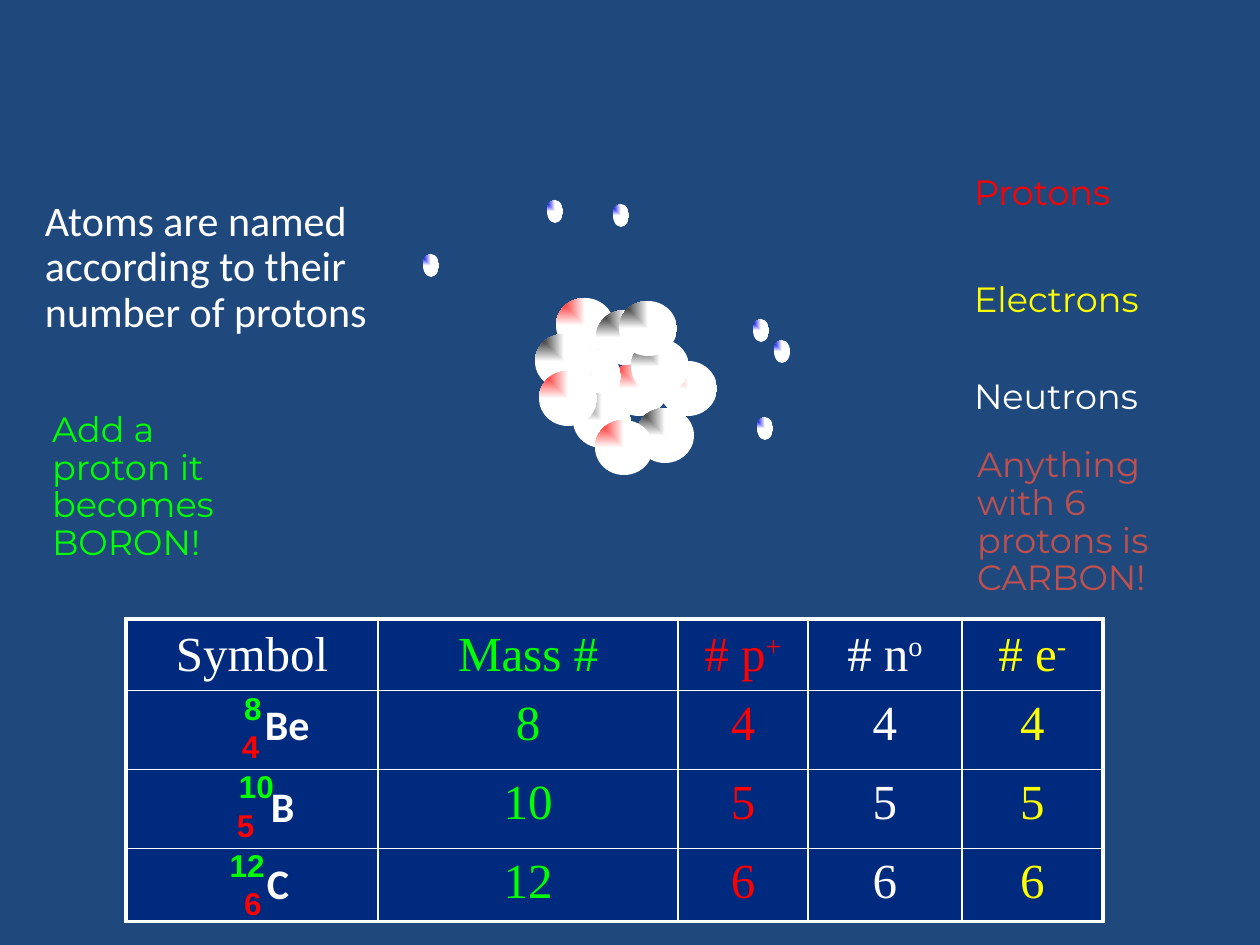
from lxml.etree import SubElement
from pptx import Presentation
from pptx.dml.color import RGBColor
from pptx.enum.shapes import MSO_SHAPE
from pptx.enum.text import MSO_ANCHOR, PP_ALIGN
from pptx.oxml import parse_xml
from pptx.oxml.ns import nsdecls, qn
from pptx.util import Pt

PX = 914400 / 126
COLORS = {"background": "1F497D", "cell": "002A7E", "white": "FFFFFF",
          "black": "000000", "red": "FF0000", "blue": "0000FF",
          "green": "00FF00", "yellow": "FFFF00", "brick": "C0504D"}

# kind: core colour, width, height
PARTICLES = {"proton": ("red", 58, 55), "neutron": ("black", 58, 55),
             "electron": ("blue", 16, 23)}
# kind, left, top; from back to front
ATOM = [
    ("proton", 556, 298), ("proton", 659, 361), ("proton", 610, 361),
    ("proton", 563, 349), ("neutron", 596, 310), ("neutron", 631, 339),
    ("neutron", 636, 408), ("neutron", 573, 393), ("neutron", 619, 301),
    ("neutron", 535, 334), ("proton", 539, 371), ("proton", 595, 420),
    ("electron", 613, 204), ("electron", 753, 319), ("electron", 423, 254),
    ("electron", 547, 200), ("electron", 774, 340), ("electron", 757, 417),
]

# text, box, colour, size, font, left inset
NOTES = [
    ("Atoms are named according to their number of protons",
     (-15, 194, 403, 180), "white", 24, "Calibri", 60),
    ("Protons", (961, 169, 281, 58), "red", 20, "Montserrat", 13),
    ("Electrons", (961, 276, 281, 62), "yellow", 20, "Montserrat", 13),
    ("Neutrons", (961, 373, 281, 58), "white", 20, "Montserrat", 13),
    ("Add a proton it becomes BORON!", (-8, 406, 271, 190), "green", 20, "Montserrat", 60),
    ("Anything with 6 protons is CARBON!", (917, 441, 271, 190), "brick", 20, "Montserrat", 60),
]

TABLE_LEFT, TABLE_TOP = 126, 619
COLUMN_WIDTHS = [252, 300, 130, 154, 141]
ROW_HEIGHTS = [67, 79, 79, 73]
COLUMN_COLORS = ["white", "green", "red", "white", "yellow"]
# header text, superscript
HEADERS = [("Symbol", ""), ("Mass #", ""), ("# p", "+"), ("# n", "o"), ("# e", "-")]
COUNTS = [["", "8", "4", "4", "4"], ["", "10", "5", "5", "5"], ["", "12", "6", "6", "6"]]

# mass, atomic number and symbol, each with its box
ISOTOPES = [
    [("8", (231, 683, 44, 50)), ("4", (229, 721, 44, 50)), ("Be", (252, 692, 73, 63))],
    [("10", (226, 761, 66, 50)), ("5", (224, 800, 66, 50)), ("B", (258, 774, 95, 63))],
    [("12", (198, 840, 79, 50)), ("6", (231, 878, 44, 50)), ("C", (254, 851, 63, 63))],
]
ISOTOPE_FORMATS = [("green", 18, "Arial"), ("red", 18, "Arial"), ("white", 24, "Calibri")]


def px(value):
    return round(value * PX)


def rgb(color):
    return RGBColor.from_string(COLORS[color])


def add_run(paragraph, text, color, size, font, bold=False):
    run = paragraph.add_run()
    run.text = text
    for name, value in {"size": Pt(size), "name": font, "bold": bold}.items():
        setattr(run.font, name, value)
    run.font.color.rgb = rgb(color)
    return run


def add_text(slide, text, box, color, size, font, inset=13, bold=False):
    frame = slide.shapes.add_textbox(*map(px, box)).text_frame
    frame.word_wrap = True
    frame.margin_left = px(inset)
    paragraph = frame.paragraphs[0]
    add_run(paragraph, text, color, size, font, bold)
    return paragraph


def add_particle(slide, kind, left, top):
    color, width, height = PARTICLES[kind]
    shape = slide.shapes.add_shape(MSO_SHAPE.OVAL, *map(px, (left, top, width, height)))
    shape.shadow.inherit = False
    shape.line.fill.background()
    gradient = parse_xml(
        f'<a:gradFill {nsdecls("a")} rotWithShape="1"><a:gsLst>'
        f'<a:gs pos="0"><a:srgbClr val="{COLORS[color]}"/></a:gs>'
        f'<a:gs pos="100000"><a:srgbClr val="{COLORS["white"]}"/></a:gs></a:gsLst>'
        '<a:path path="rect"><a:fillToRect r="100000" b="100000"/></a:path></a:gradFill>')
    shape.element.spPr.find(qn("a:prstGeom")).addnext(gradient)


def set_borders(cell, widths):
    """Draw white borders; widths are points for left, right, top, bottom."""
    properties = cell._tc.get_or_add_tcPr()
    for index, (side, width) in enumerate(zip("LRTB", widths)):
        line = SubElement(properties, qn(f"a:ln{side}"), w=str(Pt(width)))
        fill = SubElement(line, qn("a:solidFill"))
        SubElement(fill, qn("a:srgbClr"), val=COLORS["white"])
        properties.insert(index, line)


def add_count_table(slide):
    rows = [HEADERS] + [[(count, "") for count in row] for row in COUNTS]
    last_row, last_column = len(rows) - 1, len(COLUMN_WIDTHS) - 1
    table = slide.shapes.add_table(
        len(rows), len(COLUMN_WIDTHS), px(TABLE_LEFT), px(TABLE_TOP),
        px(sum(COLUMN_WIDTHS)), px(sum(ROW_HEIGHTS))).table
    for column, width in zip(table.columns, COLUMN_WIDTHS):
        column.width = px(width)
    for row, height in zip(table.rows, ROW_HEIGHTS):
        row.height = px(height)
    for r, row in enumerate(rows):
        for c, (text, superscript) in enumerate(row):
            cell = table.cell(r, c)
            cell.fill.solid()
            cell.fill.fore_color.rgb = rgb("cell")
            cell.vertical_anchor = MSO_ANCHOR.TOP if r else MSO_ANCHOR.MIDDLE
            outer = (c == 0, c == last_column, r == 0, r == last_row)
            set_borders(cell, [2.25 if edge else 1 for edge in outer])
            paragraph = cell.text_frame.paragraphs[0]
            paragraph.alignment = PP_ALIGN.CENTER
            style = (COLUMN_COLORS[c], 28, "Times New Roman")
            if text:
                add_run(paragraph, text, *style)
            if superscript:
                run = add_run(paragraph, superscript, *style)
                run.font._element.set("baseline", "30000")


def main():
    presentation = Presentation()
    presentation.slide_width, presentation.slide_height = px(1260), px(945)
    slide = presentation.slides.add_slide(presentation.slide_layouts[6])
    slide.background.fill.solid()
    slide.background.fill.fore_color.rgb = rgb("background")

    for particle in ATOM:
        add_particle(slide, *particle)
    for note in NOTES:
        add_text(slide, *note).line_spacing = 0.9
    add_count_table(slide)
    for isotope in ISOTOPES:
        for (text, box), style in zip(isotope, ISOTOPE_FORMATS):
            paragraph = add_text(slide, text, box, *style, bold=True)
            if text == "12":
                paragraph.alignment = PP_ALIGN.RIGHT
    presentation.save("out.pptx")


if __name__ == "__main__":
    main()
